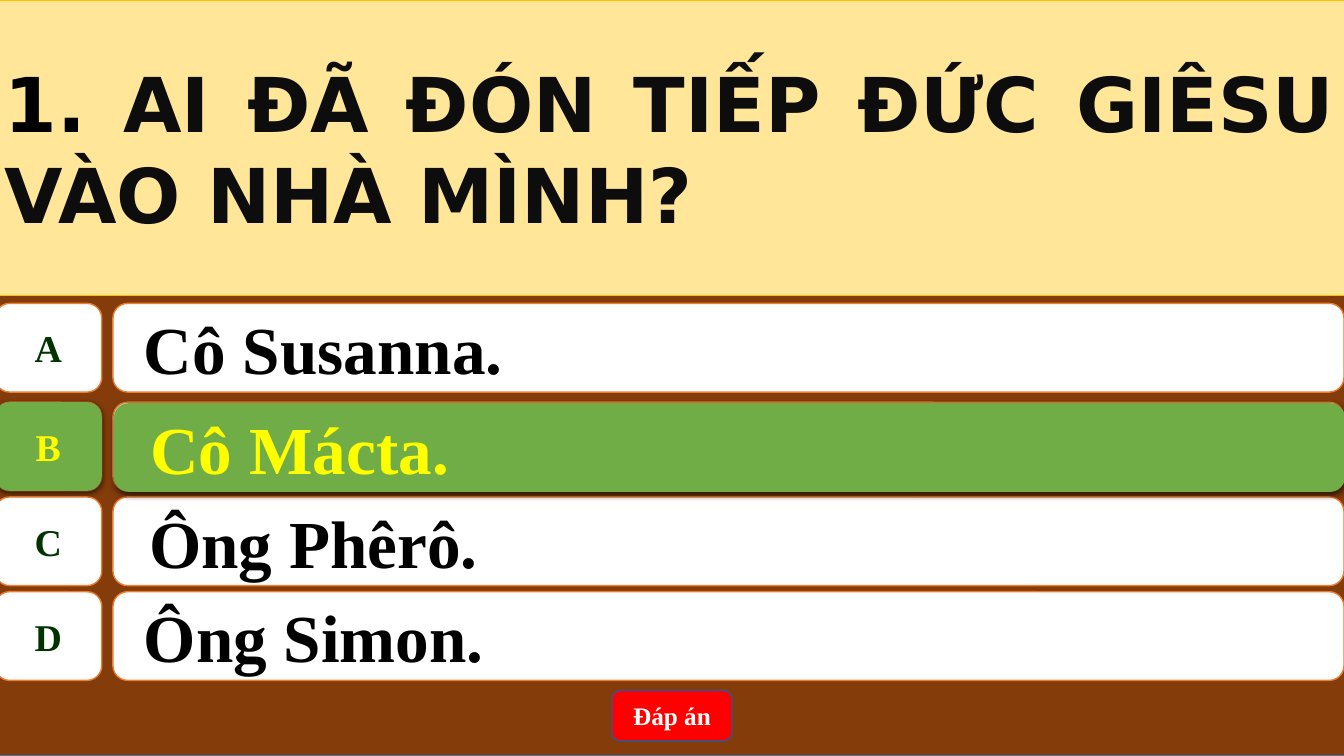
from pptx import Presentation
from pptx.dml.color import RGBColor
from pptx.enum.shapes import MSO_SHAPE as SHAPE
from pptx.enum.text import MSO_ANCHOR as ANCHOR, PP_ALIGN as ALIGN
from pptx.oxml import parse_xml
from pptx.oxml.ns import nsdecls
from pptx.util import Inches, Pt

SERIF = "Times New Roman"
ROW_H = 0.88
ANSWERS = [
    ("A", " Cô Susanna.", 3.01, False),
    ("B", "Cô Mácta.", 3.99, True),
    ("C", "Ông Phêrô.", 4.93, True),
    ("D", " Ông Simon.", 5.87, False),
]


def rgb(color):
    """Turn a hex string into a colour."""
    return RGBColor.from_string(color)


def add_box(shapes, kind, x, y, w, h, fill, line=None, width=1):
    """Add a filled shape, outlined when a line colour is given."""
    s = shapes.add_shape(kind, Inches(x), Inches(y), Inches(w), Inches(h))
    s.shadow.inherit = False
    s.fill.solid()
    s.fill.fore_color.rgb = rgb(fill)
    if line:
        s.line.color.rgb = rgb(line)
        s.line.width = Pt(width)
    else:
        s.line.fill.background()
    return s


def write(s, text, size, color, font=SERIF, align=ALIGN.LEFT, wrap=True, hanging=False):
    """Append bold text to the first paragraph of a shape."""
    tf = s.text_frame
    tf.word_wrap = wrap
    tf.vertical_anchor = ANCHOR.MIDDLE
    p = tf.paragraphs[0]
    p.alignment = align
    if hanging:
        p.level = 1
        pPr = p._p.get_or_add_pPr()
        pPr.set("marL", str(Inches(0.5)))
        pPr.set("indent", str(Inches(-0.28)))
    r = p.add_run()
    r.text = text
    r.font.name = font
    r.font.size = Pt(size)
    r.font.bold = True
    r.font.color.rgb = rgb(color)


def add_shadow(s):
    """Give a shape a soft shadow straight below it."""
    spPr = s._element.spPr
    spPr.remove(spPr.find("{*}effectLst"))
    spPr.append(parse_xml(
        f'<a:effectLst {nsdecls("a")}>'
        f'<a:outerShdw blurRad="{Pt(4.5)}" dist="{Pt(1.5)}" dir="5400000" rotWithShape="0">'
        '<a:srgbClr val="000000"><a:alpha val="63000"/></a:srgbClr>'
        '</a:outerShdw></a:effectLst>'))


def add_answer(shapes, letter, text, y, hanging, correct=False):
    """Add a grouped letter and answer, green when it is the correct one."""
    group = shapes.add_group_shape().shapes
    fill, line = ("70AD47", None) if correct else ("FFFFFF", "ED7D31")
    key = add_box(group, SHAPE.FLOWCHART_ALTERNATE_PROCESS, -0.05, y, 1.06, ROW_H, fill, line)
    bar = add_box(group, SHAPE.ROUNDED_RECTANGLE, 1.12, y, 12.21, ROW_H, fill, line)
    if correct:
        bar.left, bar.top = Inches(1.13), Inches(y + 0.01)
        add_shadow(key)
        add_shadow(bar)
    write(key, letter, 27, "FFFF00" if correct else "003300", align=ALIGN.CENTER, wrap=False)
    write(bar, text, 48, "FFFF00" if correct else "000000", hanging=hanging)


def main():
    """Build the quiz slide."""
    prs = Presentation()
    prs.slide_width, prs.slide_height = Inches(13.33), Inches(7.5)
    shapes = prs.slides.add_slide(prs.slide_layouts[6]).shapes

    add_box(shapes, SHAPE.RECTANGLE, -0.05, 0, 13.39, 7.5, "843C0B", "43739E")
    for answer in ANSWERS:
        add_answer(shapes, *answer)

    button = add_box(shapes, SHAPE.ROUNDED_RECTANGLE, 6.07, 6.85, 1.19, 0.5, "FF0000", "325491")
    write(button, "Đáp án", 18, "FFFFFF", align=ALIGN.CENTER)

    question = add_box(shapes, SHAPE.RECTANGLE, -0.05, 0, 13.39, 2.93, "FFE699", "FFC000", 0.5)
    for text, color in (("1. ", "000000"), ("AI ĐÃ ĐÓN TIẾP ĐỨC GIÊSU VÀO NHÀ MÌNH?", "0D0D0D")):
        write(question, text, 54, color, font="DejaVu Sans", align=ALIGN.JUSTIFY)

    add_answer(shapes, *ANSWERS[1], correct=True)
    prs.save("out.pptx")


if __name__ == "__main__":
    main()
